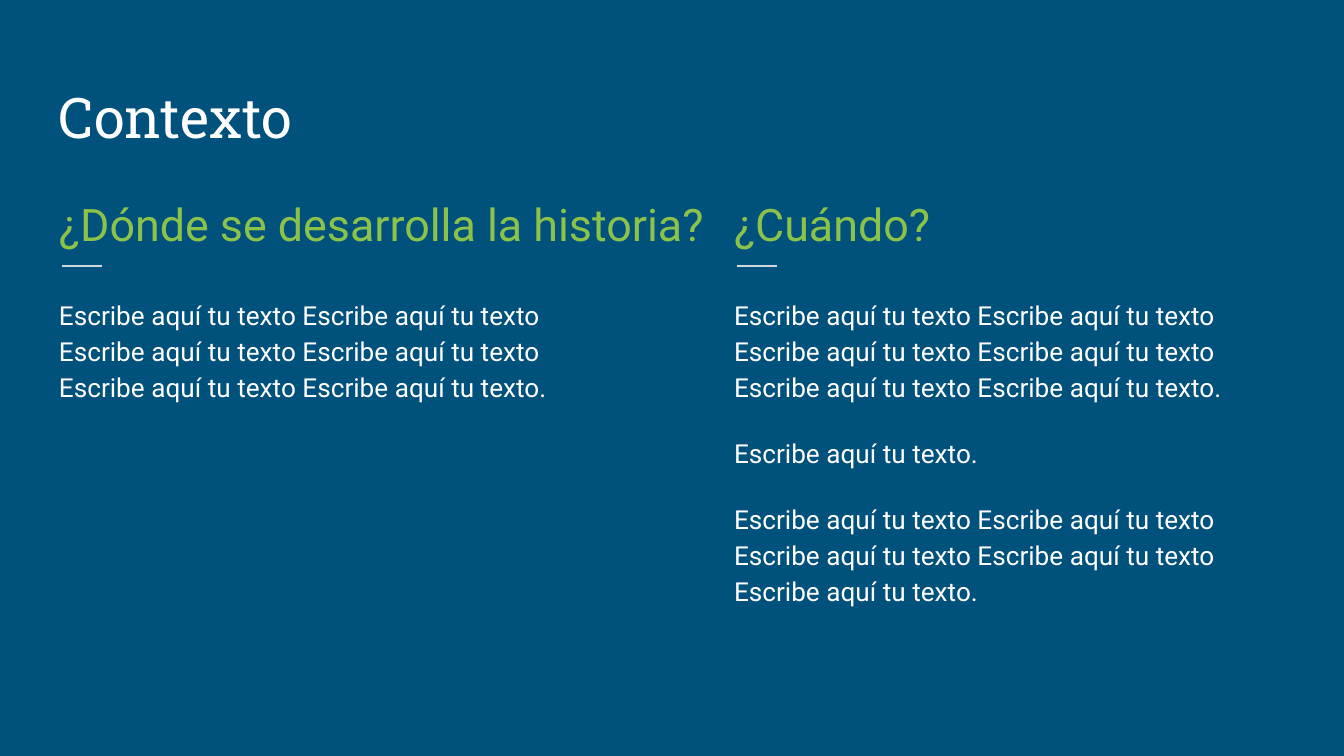
from dataclasses import dataclass

from pptx import Presentation
from pptx.dml.color import RGBColor
from pptx.enum.shapes import MSO_CONNECTOR as Connector
from pptx.enum.text import MSO_ANCHOR as Anchor, MSO_AUTO_SIZE as AutoSize, PP_ALIGN as Align
from pptx.oxml.ns import qn
from pptx.util import Pt

EMU_PER_PX = 914400 / 134.4
COMPARISON_LAYOUT = 4


@dataclass(frozen=True)
class Theme:
    background: str = "00517C"
    text: str = "FFFFFF"
    accent: str = "8BC34A"
    rule: str = "CFD8DC"
    title_font: str = "Roboto Slab"
    body_font: str = "Roboto"
    title_size: int = 30
    heading_size: int = 24
    body_size: int = 14
    rule_width: float = 0.75
    line_spacing: float = 1.15
    paragraph_gap: int = 16


THEME = Theme()
PHRASE = "Escribe aquí tu texto"


def px(length):
    return round(length * EMU_PER_PX)


def repeated(count):
    return " ".join([PHRASE] * count) + "."


def set_all(target, values):
    for name, value in values.items():
        setattr(target, name, value)


def fill_placeholder(holder, box, paragraphs, font, size, color,
                     anchor=Anchor.TOP, line_spacing=THEME.line_spacing):
    """Place a placeholder and replace its inherited text format."""
    set_all(holder, dict(zip(("left", "top", "width", "height"), map(px, box))))
    frame = holder.text_frame
    frame.text = "\n".join(paragraphs)
    margins = {f"margin_{side}": px(13) for side in ("left", "top", "right", "bottom")}
    set_all(frame, {"word_wrap": True, "auto_size": AutoSize.NONE,
                    "vertical_anchor": anchor, **margins})
    for position, paragraph in enumerate(frame.paragraphs):
        set_all(paragraph, {
            "alignment": Align.LEFT,
            "line_spacing": line_spacing,
            "space_before": Pt(THEME.paragraph_gap if position else 0),
            "space_after": Pt(0),
        })
        properties = paragraph._p.get_or_add_pPr()
        properties.set("marL", "0")
        properties.set("indent", "0")
        properties.append(properties.makeelement(qn("a:buNone"), {}))
        for run in paragraph.runs:
            set_all(run.font, {"name": font, "size": Pt(size), "bold": False})
            run.font.color.rgb = RGBColor.from_string(color)


def add_rule(slide, left, top, width):
    rule = slide.shapes.add_connector(
        Connector.STRAIGHT, px(left), px(top), px(left + width), px(top))
    rule.line.color.rgb = RGBColor.from_string(THEME.rule)
    rule.line.width = Pt(THEME.rule_width)
    properties = rule._element.spPr
    properties.append(properties.makeelement(qn("a:effectLst"), {}))


def add_column(slide, heading_holder, body_holder, left, heading_width, heading, paragraphs):
    fill_placeholder(heading_holder, (left, 176, heading_width, 77), [heading],
                     THEME.body_font, THEME.heading_size, THEME.accent)
    add_rule(slide, left + 16, 266, 40)
    fill_placeholder(body_holder, (left, 282, 566, 405), paragraphs,
                     THEME.body_font, THEME.body_size, THEME.text)


def main():
    deck = Presentation()
    deck.slide_width, deck.slide_height = px(1344), px(756)
    slide = deck.slides.add_slide(deck.slide_layouts[COMPARISON_LAYOUT])
    background = slide.background.fill
    background.solid()
    background.fore_color.rgb = RGBColor.from_string(THEME.background)

    title, where_heading, where_body, when_heading, when_body = slide.placeholders
    fill_placeholder(title, (46, 55, 1253, 108), ["Contexto"], THEME.title_font,
                     THEME.title_size, THEME.text, Anchor.BOTTOM, 1.0)
    add_column(slide, where_heading, where_body, 46, 675,
               "¿Dónde se desarrolla la historia?", [repeated(6)])
    add_column(slide, when_heading, when_body, 721, 566,
               "¿Cuándo?", [repeated(6), repeated(1), repeated(5)])
    deck.save("out.pptx")


if __name__ == "__main__":
    main()
